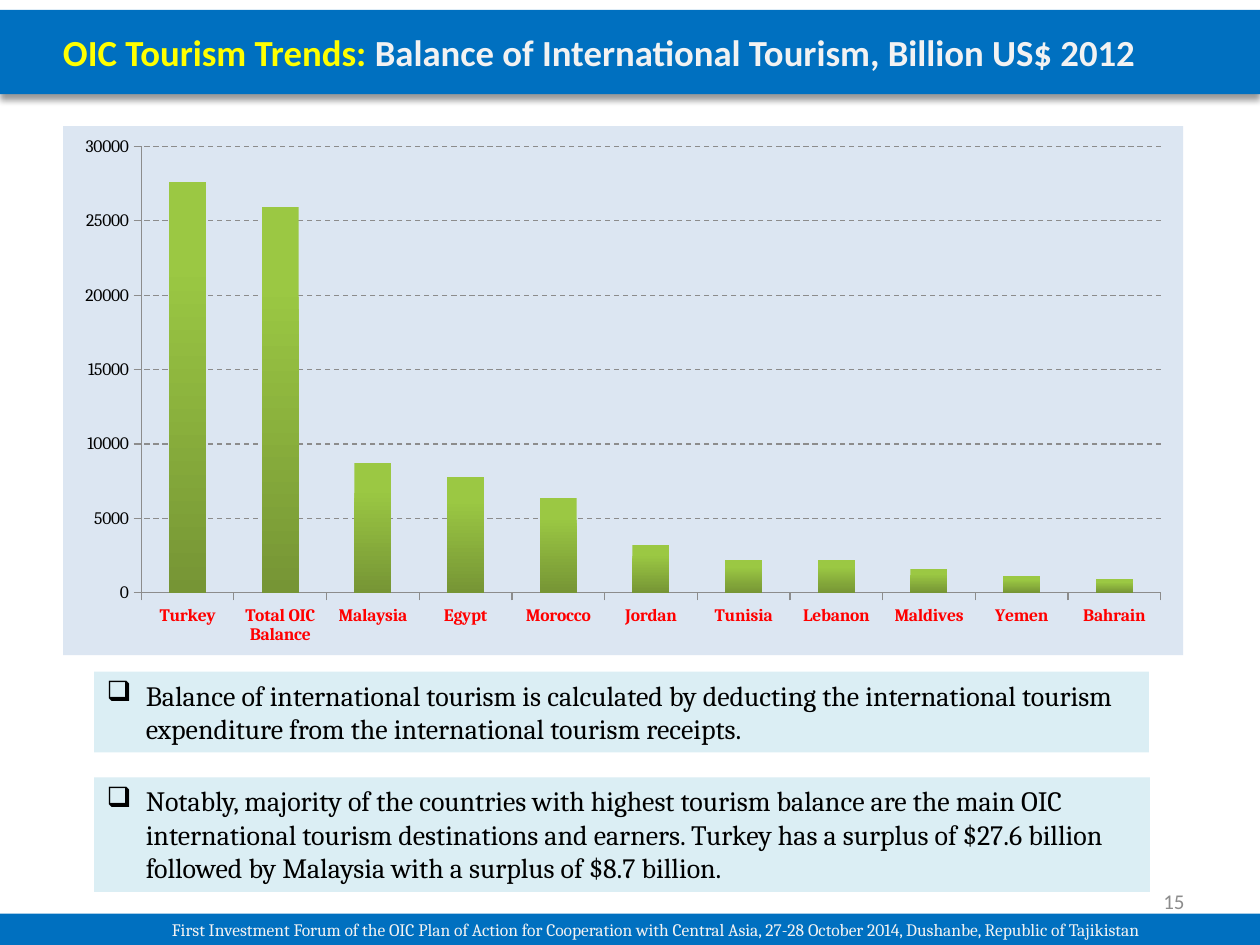
from pptx import Presentation
from pptx import util as u
from pptx.chart.data import CategoryChartData
from pptx.dml.color import RGBColor
from pptx.enum import chart as ch, dml, shapes, text
from pptx.oxml import parse_xml
from pptx.oxml.ns import nsdecls, qn

BLUE = RGBColor(0x00, 0x70, 0xC0)
PALE = RGBColor(0xDB, 0xEE, 0xF4)
MIST = RGBColor(0xDC, 0xE6, 0xF2)
YELLOW = RGBColor(0xFF, 0xFF, 0x00)
WHITE = RGBColor(0xF2, 0xF2, 0xF2)
BLACK = RGBColor(0x00, 0x00, 0x00)
RED = RGBColor(0xFF, 0x00, 0x00)
GREY = RGBColor(0x8C, 0x8C, 0x8C)
LIME = RGBColor(0x9B, 0xC8, 0x43)
OLIVE = RGBColor(0x76, 0x95, 0x35)

SALES = {
    "Turkey": 27600, "Total OIC Balance": 25900, "Malaysia": 8700,
    "Egypt": 7800, "Morocco": 6400, "Jordan": 3200, "Tunisia": 2200,
    "Lebanon": 2200, "Maldives": 1600, "Yemen": 1100, "Bahrain": 900,
}
NOTES = [
    ((1.9, 13.54, 21.26, 1.63),
     "Balance of international tourism is calculated by deducting the "
     "international tourism expenditure from the international tourism receipts."),
    ((1.9, 15.67, 21.28, 2.31),
     "Notably, majority of the countries with highest tourism balance are the "
     "main OIC international tourism destinations and earners. Turkey has a "
     "surplus of $27.6 billion followed by Malaysia with a surplus of $8.7 billion."),
]


def put(obj, **vals):
    """Set each named attribute on the object."""
    for key, val in vals.items():
        setattr(obj, key, val)


def style(font, size, name, color, bold=False):
    """Give a font its size, face, colour and weight."""
    put(font, size=u.Pt(size), name=name, bold=bold)
    font.color.rgb = color


def write(shape, runs, align=text.PP_ALIGN.LEFT, anchor=text.MSO_ANCHOR.MIDDLE,
          left=0.25):
    """Fill a shape with one paragraph of styled runs."""
    frame = shape.text_frame
    put(frame, word_wrap=True, vertical_anchor=anchor, margin_left=u.Cm(left),
        margin_right=u.Cm(0.25), margin_top=u.Cm(0.13), margin_bottom=u.Cm(0.13))
    par = frame.paragraphs[0]
    par.alignment = align
    for words, *look in runs:
        run = par.add_run()
        run.text = words
        style(run.font, *look)
    return par


def panel(slide, box, color):
    """Add a plain filled rectangle."""
    shape = slide.shapes.add_shape(shapes.MSO_SHAPE.RECTANGLE, *map(u.Cm, box))
    shape.shadow.inherit = False
    shape.fill.solid()
    shape.fill.fore_color.rgb = color
    shape.line.fill.background()
    return shape


def header(slide, box):
    """Add the title band with its soft shadow."""
    band = panel(slide, box, BLUE)
    write(band, [("OIC Tourism Trends: ", 21, "Calibri", YELLOW, True),
                 ("Balance of International Tourism, Billion US$ 2012",
                  21, "Calibri", WHITE, True)], left=1.27)
    glow = band.element.spPr.find(qn("a:effectLst"))
    glow.append(parse_xml(
        f'<a:outerShdw {nsdecls("a")} blurRad="50800" dist="38100" dir="5400000">'
        '<a:srgbClr val="000000"><a:alpha val="40000"/></a:srgbClr></a:outerShdw>'))


def footer(slide, box):
    """Add the event band and the page number above it."""
    write(panel(slide, box, BLUE),
          [("First Investment Forum of the OIC Plan of Action for Cooperation with "
            "Central Asia, 27-28 October 2014, Dushanbe, Republic of Tajikistan",
            10, "Cambria", WHITE)], text.PP_ALIGN.CENTER, left=1.27)
    left, top, wide, _ = box
    page = slide.shapes.add_textbox(
        *map(u.Cm, (left + wide - 7.19, top - 0.76, 5.92, 1.02)))
    write(page, [("15", 12, "Calibri", GREY)], text.PP_ALIGN.RIGHT)


def note(slide, box, words):
    """Add a tinted box with one bulleted paragraph."""
    par = write(panel(slide, box, PALE), [(words, 16, "Cambria", BLACK)],
                anchor=text.MSO_ANCHOR.TOP)
    props = par._p.get_or_add_pPr()
    dent = u.Cm(0.79)
    props.set("marL", str(dent))
    props.set("indent", str(-dent))
    props.append(parse_xml(f'<a:buChar {nsdecls("a")} char="❑"/>'))


def tint():
    """Make the pale fill for a chart area."""
    return parse_xml(
        f'<c:spPr {nsdecls("c", "a")}><a:solidFill><a:srgbClr val="{MIST}"/>'
        '</a:solidFill><a:ln><a:noFill/></a:ln></c:spPr>')


def graph(slide, box):
    """Add the column chart of tourism balances."""
    data = CategoryChartData()
    data.categories = list(SALES)
    data.add_series("Series 1", list(SALES.values()))
    chart = slide.shapes.add_chart(
        ch.XL_CHART_TYPE.COLUMN_STACKED, *map(u.Cm, box), data).chart
    put(chart, has_legend=False, has_title=False)
    style(chart.font, 10, "Calibri", BLACK)
    root = chart._chartSpace
    root.find(qn("c:txPr")).addprevious(tint())
    root.chart.plotArea.append(tint())

    plot = chart.plots[0]
    put(plot, gap_width=150, overlap=100, vary_by_categories=False)
    fill = plot.series[0].format.fill
    fill.gradient()
    fill.gradient_angle = 270
    for stop, color, pos in zip(fill.gradient_stops, (LIME, OLIVE), (0.2, 1)):
        stop.color.rgb = color
        stop.position = pos

    cat, val = chart.category_axis, chart.value_axis
    for axis, color, bold in ((cat, RED, True), (val, BLACK, False)):
        axis.major_tick_mark = ch.XL_TICK_MARK.OUTSIDE
        style(axis.tick_labels.font, 10, "Cambria", color, bold)
        axis.format.line.color.rgb = GREY
        axis.format.line.width = u.Pt(0.75)
    put(val, minimum_scale=0, maximum_scale=30000, major_unit=5000,
        has_major_gridlines=True)
    put(val.tick_labels, number_format="0", number_format_is_linked=False)
    line = val.major_gridlines.format.line
    line.color.rgb = GREY
    put(line, width=u.Pt(0.75), dash_style=dml.MSO_LINE.DASH)


def main():
    """Build and save the slide."""
    deck = Presentation()
    put(deck, slide_width=u.Cm(25.4), slide_height=u.Cm(19.05))
    slide = deck.slides.add_slide(deck.slide_layouts[6])
    footer(slide, (0, 18.42, 25.4, 0.63))
    header(slide, (0, 0.2, 25.4, 1.7))
    for box, words in NOTES:
        note(slide, box, words)
    graph(slide, (1.27, 2.54, 22.58, 10.67))
    deck.save("out.pptx")


if __name__ == "__main__":
    main()
